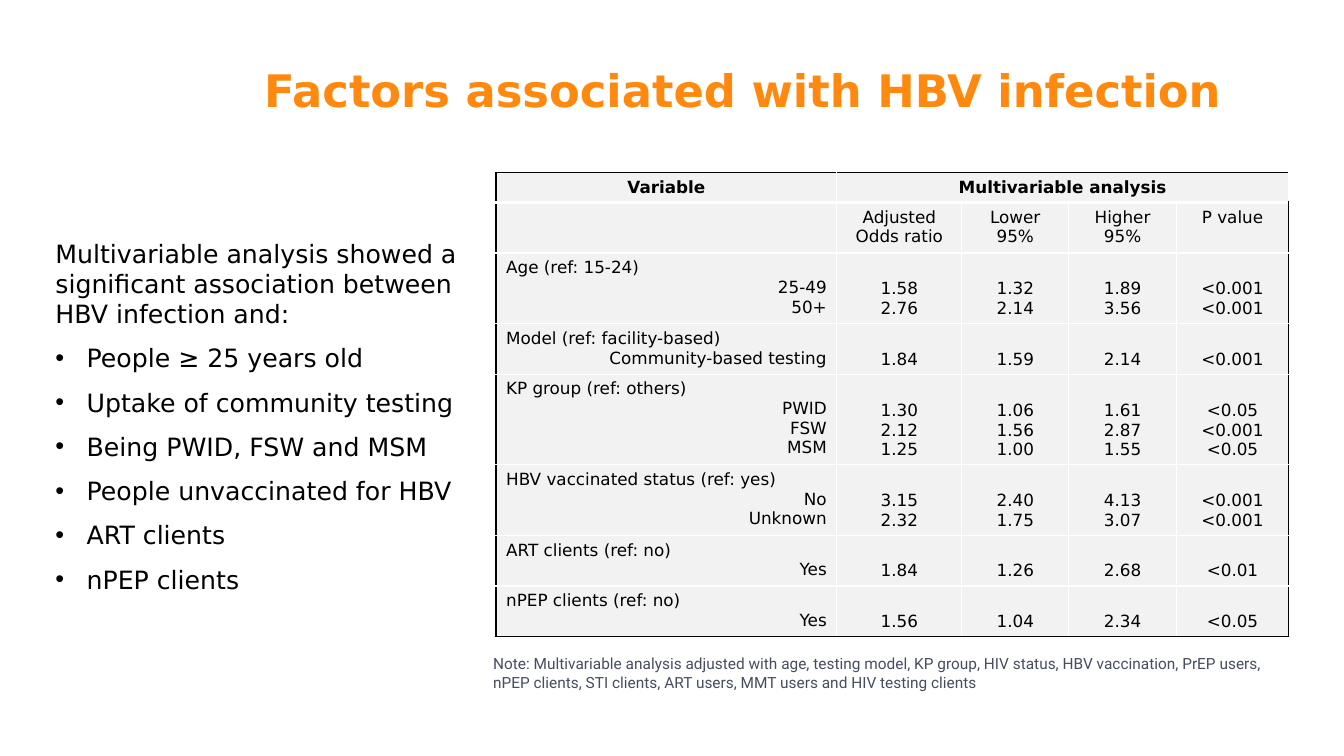
"""Build the slide on factors associated with HBV infection."""
from dataclasses import dataclass

from lxml import etree
from pptx import Presentation
from pptx.dml.color import RGBColor
from pptx.enum import text as t
from pptx.oxml import ns
from pptx.util import Inches, Pt

ORANGE = RGBColor(0xFF, 0x89, 0x0E)
BLACK = RGBColor(0, 0, 0)
WHITE = RGBColor(0xFF, 0xFF, 0xFF)
SLATE = RGBColor(0x45, 0x4E, 0x60)
PALE_GREY = RGBColor(0xF2, 0xF2, 0xF2)

MAIN_FONT = "DejaVu Sans"
LEFT, CENTER, RIGHT = t.PP_ALIGN.LEFT, t.PP_ALIGN.CENTER, t.PP_ALIGN.RIGHT
TOP, MIDDLE, BOTTOM = t.MSO_ANCHOR.TOP, t.MSO_ANCHOR.MIDDLE, t.MSO_ANCHOR.BOTTOM

COLUMN_WIDTHS = (3.38, 1.24, 1.06, 1.07, 1.11)
CELL_PADDING, LINE_HEIGHT = 0.1, 0.195
MEASURES = ("Adjusted Odds ratio", "Lower 95%", "Higher 95%", "P value")


@dataclass(frozen=True)
class TextBlock:
    left: float
    top: float
    width: float
    height: float
    lines: tuple[str, ...]
    size: float
    color: RGBColor
    font: str = MAIN_FONT
    bold: bool = False
    anchor: t.MSO_ANCHOR = TOP


@dataclass(frozen=True)
class Factor:
    label: str
    results: tuple[tuple[str, ...], ...]


TITLE = TextBlock(2.62, 0.25, 10.55, 1.34, ("Factors associated with HBV infection",),
                  32, ORANGE, bold=True, anchor=MIDDLE)
FINDINGS = TextBlock(0.55, 2.36, 4.13, 4.29, (
    "Multivariable analysis showed a significant association between HBV infection and:",
    "People ≥ 25 years old",
    "Uptake of community testing",
    "Being PWID, FSW and MSM",
    "People unvaccinated for HBV",
    "ART clients",
    "nPEP clients",
), 18, BLACK)
NOTE = TextBlock(4.89, 6.49, 7.91, 0.44, (
    "Note: Multivariable analysis adjusted with age, testing model, KP group, HIV status, "
    "HBV vaccination, PrEP users, nPEP clients, STI clients, ART users, MMT users and "
    "HIV testing clients",
), 11, SLATE, font="Roboto")

FACTORS = (
    Factor("Age (ref: 15-24)", (("25-49", "1.58", "1.32", "1.89", "<0.001"),
                                ("50+", "2.76", "2.14", "3.56", "<0.001"))),
    Factor("Model (ref: facility-based)",
           (("Community-based testing", "1.84", "1.59", "2.14", "<0.001"),)),
    Factor("KP group (ref: others)", (("PWID", "1.30", "1.06", "1.61", "<0.05"),
                                      ("FSW", "2.12", "1.56", "2.87", "<0.001"),
                                      ("MSM", "1.25", "1.00", "1.55", "<0.05"))),
    Factor("HBV vaccinated status (ref: yes)",
           (("No", "3.15", "2.40", "4.13", "<0.001"),
            ("Unknown", "2.32", "1.75", "3.07", "<0.001"))),
    Factor("ART clients (ref: no)", (("Yes", "1.84", "1.26", "2.68", "<0.01"),)),
    Factor("nPEP clients (ref: no)", (("Yes", "1.56", "1.04", "2.34", "<0.05"),)),
)


def style(paragraph, size: float, color: RGBColor, font: str = MAIN_FONT,
          bold: bool = False) -> None:
    """Format every run of a paragraph."""
    for run in paragraph.runs:
        run.font.size, run.font.bold, run.font.name = Pt(size), bold, font
        run.font.color.rgb = color


def add_text(slide, block: TextBlock):
    """Add a text box without insets and return its paragraphs."""
    box = slide.shapes.add_textbox(*map(Inches, (block.left, block.top, block.width, block.height)))
    frame = box.text_frame
    frame.word_wrap, frame.vertical_anchor = True, block.anchor
    frame.margin_left = frame.margin_top = frame.margin_right = frame.margin_bottom = 0
    frame.text = "\n".join(block.lines)
    for paragraph in frame.paragraphs:
        style(paragraph, block.size, block.color, block.font, block.bold)
    return frame.paragraphs


def add_bullet(paragraph) -> None:
    """Give a paragraph a hanging round bullet."""
    properties = paragraph._p.get_or_add_pPr()
    properties.set("marL", str(Inches(0.31)))
    properties.set("indent", str(-Inches(0.31)))
    etree.SubElement(properties, ns.qn("a:buFont"), typeface="Arial")
    etree.SubElement(properties, ns.qn("a:buChar"), char="•")
    paragraph.space_before = Pt(10)


def set_borders(cell, row: int, column: int, last_row: int, last_column: int) -> None:
    """Draw a black outer frame, white inner rules and a thick rule under the header."""
    sides = {
        "a:lnL": (column == 0, 1),
        "a:lnR": (column == last_column, 1),
        "a:lnT": (row == 0, 3 if row == 1 else 1),
        "a:lnB": (row == last_row, 3 if row == 0 else 1),
    }
    properties = cell._tc.get_or_add_tcPr()
    for tag, (outer, width) in sides.items():
        line = etree.SubElement(properties, ns.qn(tag), w=str(Pt(width)))
        fill = etree.SubElement(line, ns.qn("a:solidFill"))
        etree.SubElement(fill, ns.qn("a:srgbClr"), val=str(BLACK if outer else WHITE))


def fill_cell(cell, lines: tuple[str, ...], alignments: tuple[t.PP_ALIGN, ...],
              bold: bool = False, anchor: t.MSO_ANCHOR = TOP) -> None:
    """Write the lines of a cell, each with its alignment."""
    cell.vertical_anchor = anchor
    cell.text_frame.text = "\n".join(lines)
    for paragraph, alignment in zip(cell.text_frame.paragraphs, alignments):
        paragraph.alignment = alignment
        style(paragraph, 12, BLACK, bold=bold)


def add_factor_table(slide) -> None:
    """Add the table of adjusted odds ratios."""
    line_counts = [1, 2] + [1 + len(factor.results) for factor in FACTORS]
    heights = [CELL_PADDING + LINE_HEIGHT * count for count in line_counts]
    rows, columns = len(heights), len(COLUMN_WIDTHS)
    table = slide.shapes.add_table(rows, columns, Inches(4.92), Inches(1.71),
                                   Inches(sum(COLUMN_WIDTHS)), Inches(sum(heights))).table
    for column, width in zip(table.columns, COLUMN_WIDTHS):
        column.width = Inches(width)
    for row, height in enumerate(heights):
        table.rows[row].height = Inches(height)
        for column in range(columns):
            cell = table.cell(row, column)
            set_borders(cell, row, column, rows - 1, columns - 1)
            cell.fill.solid()
            cell.fill.fore_color.rgb = PALE_GREY

    table.cell(0, 1).merge(table.cell(0, columns - 1))
    fill_cell(table.cell(0, 0), ("Variable",), (CENTER,), bold=True)
    fill_cell(table.cell(0, 1), ("Multivariable analysis",), (CENTER,), bold=True)
    for column, measure in enumerate(MEASURES, start=1):
        fill_cell(table.cell(1, column), (measure,), (CENTER,))
    for row, factor in enumerate(FACTORS, start=2):
        groups, *measures = zip(*factor.results)
        fill_cell(table.cell(row, 0), (factor.label, *groups), (LEFT,) + (RIGHT,) * len(groups))
        for column, values in enumerate(measures, start=1):
            fill_cell(table.cell(row, column), values, (CENTER,) * len(values), anchor=BOTTOM)


def main() -> None:
    """Assemble and save the slide."""
    deck = Presentation()
    deck.slide_width, deck.slide_height = Inches(13.33), Inches(7.5)
    slide = deck.slides.add_slide(deck.slide_layouts[6])
    add_text(slide, TITLE)[0].line_spacing = 0.9
    for finding in add_text(slide, FINDINGS)[1:]:
        add_bullet(finding)
    add_factor_table(slide)
    add_text(slide, NOTE)
    deck.save("out.pptx")


if __name__ == "__main__":
    main()
